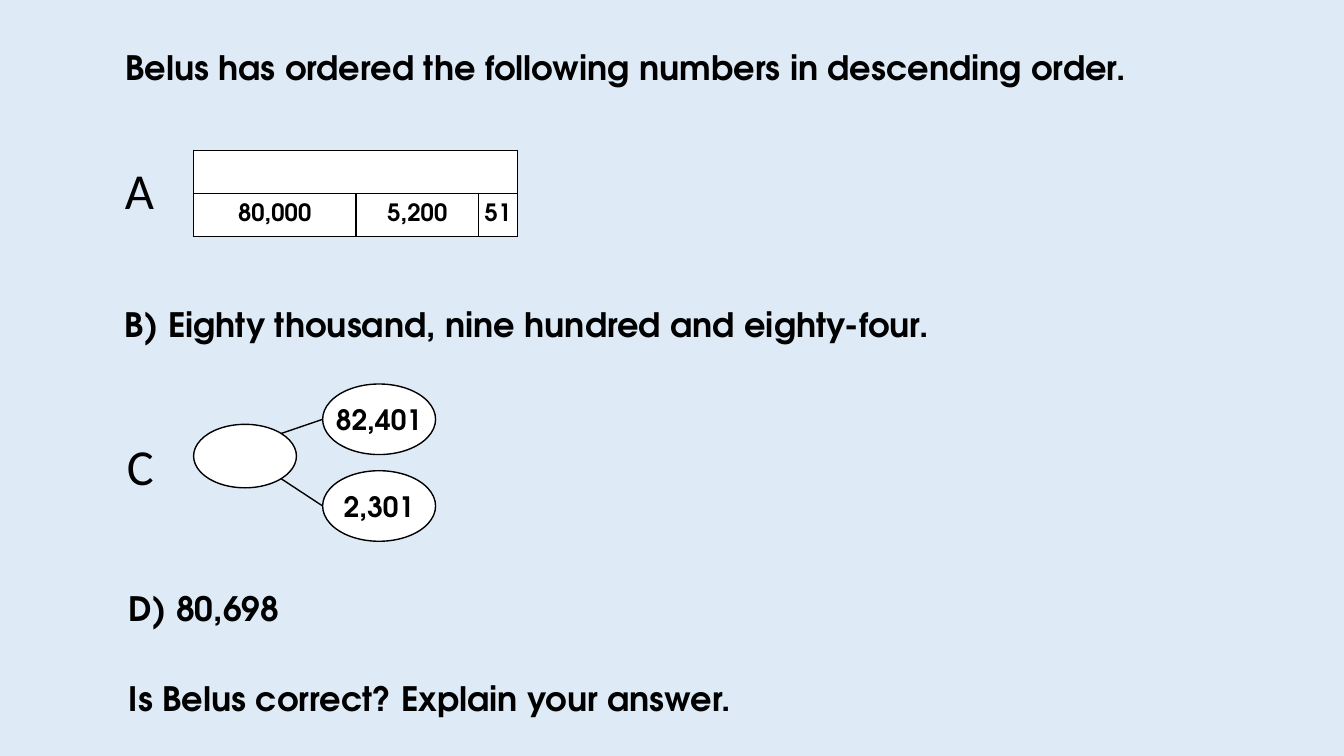
from lxml import etree
from pptx import Presentation, util as u
from pptx.dml.color import RGBColor
from pptx.enum import shapes, text
from pptx.oxml import ns

COLOURS = {"background": "DEEBF7", "ink": "000000", "paper": "FFFFFF"}
HEADING_FONT = "TeX Gyre Adventor"


def colour(name):
    return RGBColor.from_string(COLOURS[name])


def write(frame, words, size, font=HEADING_FONT, bold=True, align=text.PP_ALIGN.LEFT):
    frame.text = words
    para = frame.paragraphs[0]
    para.alignment = align
    for span in para.runs:
        span.font.size = u.Pt(size)
        span.font.name = font
        span.font.bold = bold
        span.font.color.rgb = colour("ink")


deck = Presentation()
deck.slide_width, deck.slide_height = u.Inches(13.33), u.Inches(7.5)
page = deck.slides.add_slide(deck.slide_layouts[5])
page.background.fill.solid()
page.background.fill.fore_color.rgb = colour("background")

# Question
title = page.shapes.title
title.left, title.top = u.Inches(1.14), u.Inches(0.42)
title.width, title.height = u.Inches(11.13), u.Inches(0.5)
title.text_frame.vertical_anchor = text.MSO_ANCHOR.TOP
title.text_frame.auto_size = text.MSO_AUTO_SIZE.NONE
write(title.text_frame, "Belus has ordered the following numbers in descending order.", 24)

# Bar model for A
bar_model = page.shapes.add_table(
    2, 3, u.Inches(1.92), u.Inches(1.49), u.Inches(3.22), u.Inches(0.87)).table
for column, width in zip(bar_model.columns, (1.61, 1.22, 0.38)):
    column.width = u.Inches(width)
for row in bar_model.rows:
    row.height = u.Inches(0.43)
bar_model.cell(0, 0).merge(bar_model.cell(0, 2))
for cell in bar_model.iter_cells():
    properties = cell._tc.get_or_add_tcPr()
    for side in ("a:lnL", "a:lnR", "a:lnT", "a:lnB"):
        border = etree.SubElement(properties, ns.qn(side), w=str(u.Pt(1)))
        fill = etree.SubElement(border, ns.qn("a:solidFill"))
        etree.SubElement(fill, ns.qn("a:srgbClr"), val=COLOURS["ink"])
    cell.fill.solid()
    cell.fill.fore_color.rgb = colour("paper")
for index, part in enumerate(("80,000", "5,200", "51")):
    cell = bar_model.cell(1, index)
    cell.margin_left = cell.margin_right = cell.margin_top = cell.margin_bottom = 0
    cell.vertical_anchor = text.MSO_ANCHOR.MIDDLE
    write(cell.text_frame, part, 17, align=text.PP_ALIGN.CENTER)

# Part-whole model for C: lines first, ovals on top
model = page.shapes.add_group_shape()
for start_y, end_y in ((4.16, 4.3), (5.02, 4.75)):
    link = model.shapes.add_connector(
        shapes.MSO_CONNECTOR.STRAIGHT,
        u.Inches(3.2), u.Inches(start_y), u.Inches(2.79), u.Inches(end_y))
    link.line.color.rgb = colour("ink")
    link.line.width = u.Pt(1)
    etree.SubElement(link._element.spPr, ns.qn("a:effectLst"))

for words, left, top, width, height in (
        ("82,401", 3.2, 3.81, 1.12, 0.7),
        ("2,301", 3.2, 4.67, 1.12, 0.7),
        ("", 1.92, 4.21, 1.02, 0.63)):
    oval = model.shapes.add_shape(
        shapes.MSO_SHAPE.OVAL,
        u.Inches(left), u.Inches(top), u.Inches(width), u.Inches(height))
    oval.shadow.inherit = False
    oval.fill.solid()
    oval.fill.fore_color.rgb = colour("paper")
    oval.line.color.rgb = colour("ink")
    oval.line.width = u.Pt(1)
    oval.text_frame.word_wrap = False
    oval.text_frame.vertical_anchor = text.MSO_ANCHOR.MIDDLE
    write(oval.text_frame, words, 20, align=text.PP_ALIGN.CENTER)

# Statements and option letters
for words, left, top, width, height, size, font, bold in (
        ("A", 1.14, 1.53, 0.49, 0.71, 36, "Calibri", False),
        ("B) Eighty thousand, nine hundred and eighty-four.",
         1.14, 2.97, 8.46, 0.5, 24, HEADING_FONT, True),
        ("C", 1.16, 4.27, 0.47, 0.71, 36, "Calibri", False),
        ("D) 80,698", 1.18, 5.78, 1.7, 0.5, 24, HEADING_FONT, True),
        ("Is Belus correct? Explain your answer.",
         1.18, 6.68, 6.46, 0.5, 24, HEADING_FONT, True)):
    box = page.shapes.add_textbox(
        u.Inches(left), u.Inches(top), u.Inches(width), u.Inches(height))
    box.text_frame.word_wrap = False
    box.text_frame.auto_size = text.MSO_AUTO_SIZE.SHAPE_TO_FIT_TEXT
    write(box.text_frame, words, size, font, bold)

deck.save("out.pptx")
